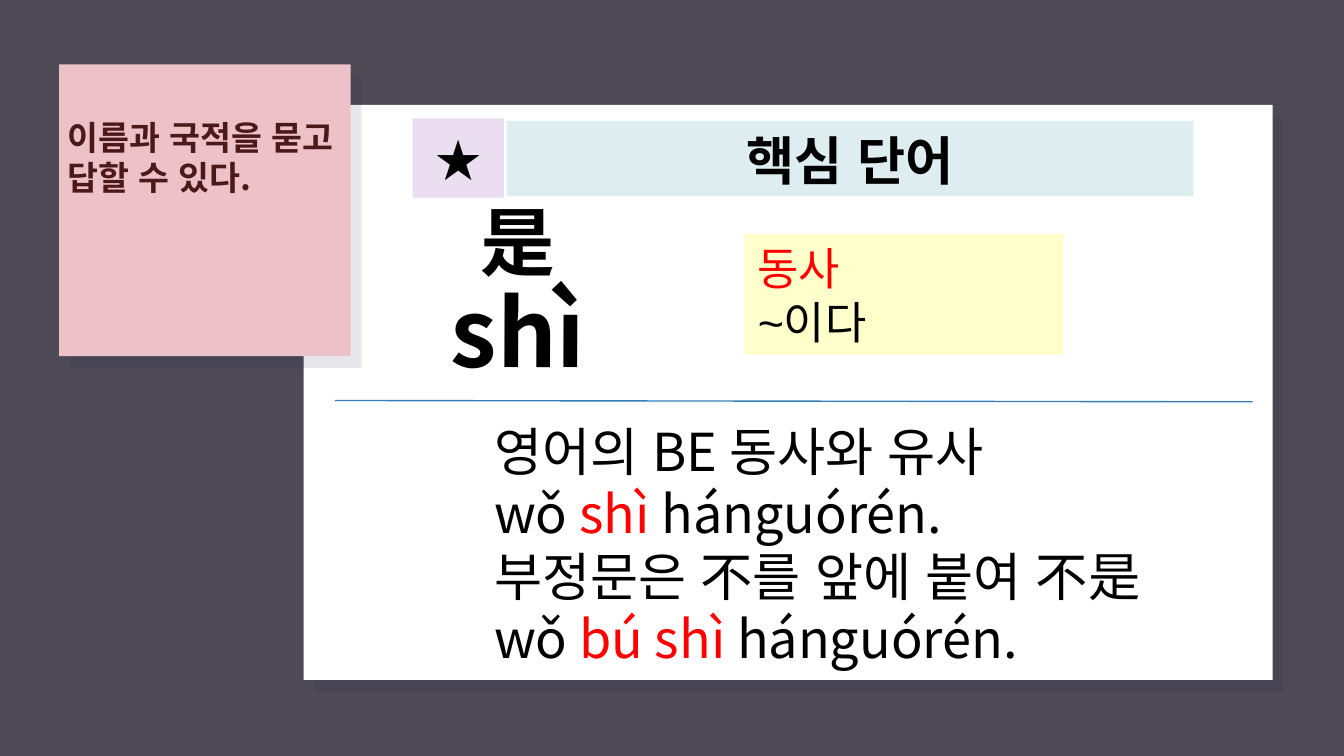
from lxml import etree
from pptx import Presentation
from pptx.dml.color import RGBColor
from pptx.enum.shapes import MSO_CONNECTOR, MSO_SHAPE
from pptx.enum.text import MSO_ANCHOR, MSO_AUTO_SIZE, PP_ALIGN
from pptx.oxml.ns import qn
from pptx.util import Inches, Pt

RECT = MSO_SHAPE.RECTANGLE
LINE = MSO_CONNECTOR.STRAIGHT
TOP, MID = MSO_ANCHOR.TOP, MSO_ANCHOR.MIDDLE
LEFT, MIDDLE = PP_ALIGN.LEFT, PP_ALIGN.CENTER
FIXED = MSO_AUTO_SIZE.NONE

ARIAL, NOTO = "Arial", "Noto Sans CJK KR"
BLACK, RED, WINE = "000000", "FF0000", "4B191A"


def color(code):
    return RGBColor.from_string(code)


def block(slide, box, fill, alpha=None):
    """Draw a plain rectangle; alpha is the opacity in percent."""
    shape = slide.shapes.add_shape(RECT, *map(Inches, box))
    shape.shadow.inherit = False
    shape.fill.solid()
    shape.fill.fore_color.rgb = color(fill)
    shape.line.fill.background()
    if alpha:
        tint = shape.element.spPr.find(".//" + qn("a:srgbClr"))
        etree.SubElement(tint, qn("a:alpha")).set("val", str(alpha * 1000))
    return shape


def write(shape, lines, size, font=ARIAL, bold=False, align=LEFT,
          anchor=TOP, pitch=None, pad=0.05):
    """Fill a shape with lines, each a list of (text, colour, own font)."""
    frame = shape.text_frame
    style = {"word_wrap": True, "auto_size": FIXED, "vertical_anchor": anchor,
             "margin_left": Inches(0.1), "margin_right": Inches(0.1),
             "margin_top": Inches(pad), "margin_bottom": Inches(pad)}
    for key, value in style.items():
        setattr(frame, key, value)
    for i, line in enumerate(lines):
        para = frame.add_paragraph() if i else frame.paragraphs[0]
        para.alignment = align
        if pitch:
            para.line_spacing = Pt(pitch)
        for text, tone, *own in line:
            run = para.add_run()
            run.text = text
            form = {"size": Pt(size), "bold": bold,
                    "name": own[0] if own else font}
            for key, value in form.items():
                setattr(run.font, key, value)
            run.font.color.rgb = color(tone)
            # East Asian text is set in Arial throughout
            east = etree.SubElement(run._r.get_or_add_rPr(), qn("a:ea"))
            east.set("typeface", ARIAL)


def label(slide, box, lines, size, **style):
    shape = slide.shapes.add_textbox(*map(Inches, box))
    write(shape, lines, size, **style)
    return shape


def panel(slide, box, fill):
    """Draw a panel over its offset translucent shade."""
    x, y, w, h = box
    block(slide, (x + 0.08, y + 0.09, w, h), "1B1B46", 10)
    block(slide, box, fill)


def header(slide, x, y):
    star = block(slide, (x, y, 0.68, 0.59), "EBDEF1")
    write(star, [[("★", BLACK)]], 30, bold=True, align=MIDDLE, anchor=MID)
    bar = block(slide, (x + 0.7, y + 0.02, 5.11, 0.56), "DDEDF0")
    write(bar, [[("핵심 단어", BLACK)]], 28, font=NOTO, bold=True,
          align=MIDDLE, anchor=MID, pitch=35)


def word(slide, x, y):
    # Character and its sound
    label(slide, (x + 1.02, y, 1.42, 0.76), [[("是", BLACK)]], 40,
          bold=True, pitch=48)
    sound = label(slide, (x, y + 0.58, 2.79, 0.93), [[("shì", BLACK)]], 50,
                  font=NOTO, bold=True, align=MIDDLE, pitch=60)
    sound.rotation = 0.2
    # Meaning
    sense = block(slide, (x + 3.08, y + 0.33, 2.37, 0.9), "FFFFCC")
    write(sense, [[("동사", RED)], [("~이다", BLACK)]], 24, anchor=MID,
          pitch=29)


def usage(slide, x, y):
    # Divider
    rule = slide.shapes.add_connector(
        LINE, *map(Inches, (x, y, x + 6.83, y + 0.01)))
    rule.line.color.rgb = color("367EB9")
    rule.line.width = Pt(0.75)
    etree.SubElement(rule.element.spPr, qn("a:effectLst"))
    # Notes and sample sentences
    end = (" hánguórén.", BLACK)
    lines = [
        [("영어의 BE 동사와 유사", BLACK)],
        [("wǒ ", BLACK), ("shì", RED), end],
        [("부정문은 不를 앞에 붙여 不", BLACK), ("是", BLACK, ARIAL)],
        [("wǒ ", BLACK), ("bú shì", RED), end],
    ]
    label(slide, (x + 1.09, y + 0.09, 5.86, 1.96), lines, 28, font=NOTO,
          pitch=33.5)


def goal(slide, box):
    """Place the title on the pink note, above all other parts."""
    title = slide.shapes.title
    slide.shapes.element.append(title.element)
    title.left, title.top, title.width, title.height = map(Inches, box)
    write(title, [[("이름과 국적을 묻고 답할 수 있다", WINE),
                   (".", WINE, NOTO)]], 18, bold=True, pitch=21.5, pad=0.1)


def main():
    deck = Presentation()
    deck.slide_width = Inches(10)
    deck.slide_height = deck.slide_width * 9 // 16
    slide = deck.slides.add_slide(deck.slide_layouts[5])
    slide.background.fill.solid()
    slide.background.fill.fore_color.rgb = color("4D4A56")

    panel(slide, (2.26, 0.78, 7.21, 4.28), "FFFFFF")
    panel(slide, (0.44, 0.48, 2.17, 2.17), "ECC1C8")
    header(slide, 3.07, 0.88)
    word(slide, 2.46, 1.41)
    usage(slide, 2.49, 2.98)
    goal(slide, (0.4, 0.77, 2.23, 1.77))
    deck.save("out.pptx")


if __name__ == "__main__":
    main()
